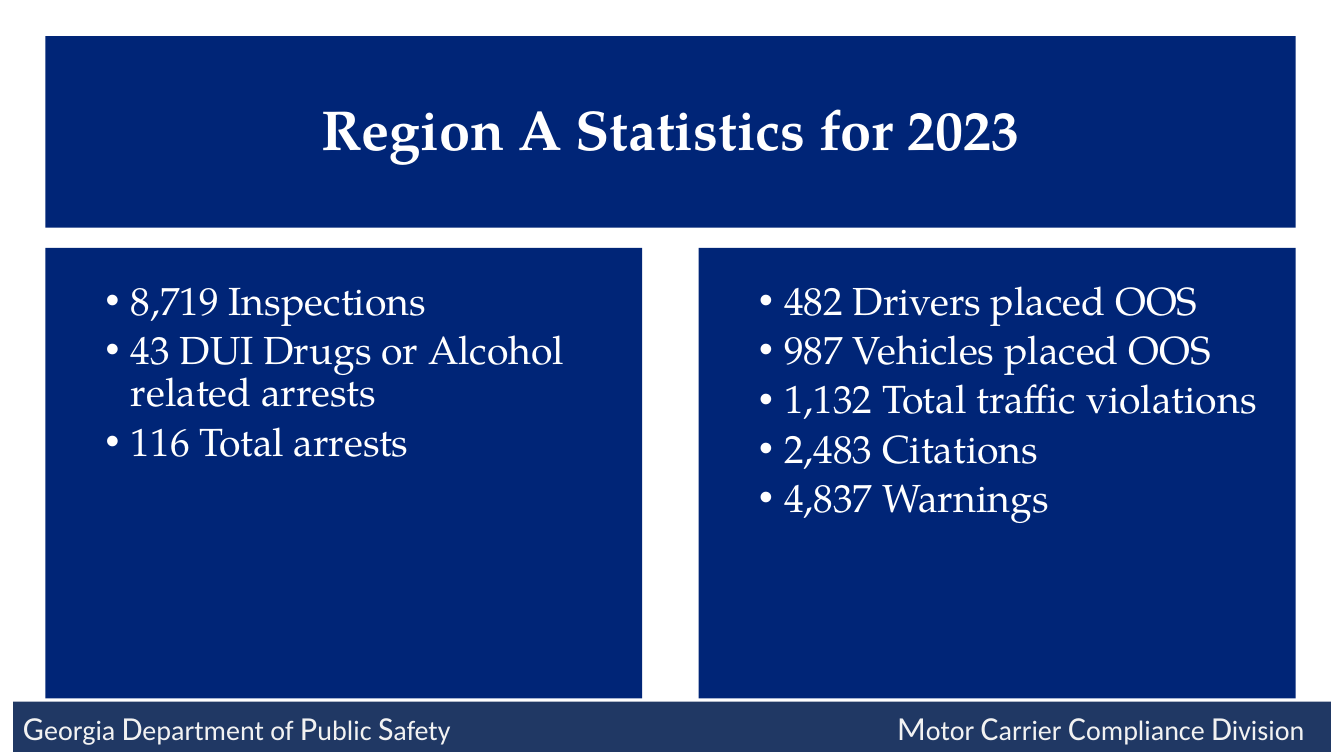
from dataclasses import dataclass
from itertools import groupby

from lxml import etree
from pptx import Presentation
from pptx import util as u
from pptx.dml.color import RGBColor
from pptx.enum import shapes, text
from pptx.oxml import ns


@dataclass(frozen=True)
class Theme:
    panel: str = "002577"
    bar: str = "203864"
    light: str = "FFFFFF"
    bar_text: str = "F2F2F2"
    serif: str = "TeX Gyre Pagella"
    sans: str = "Calibri"
    title: int = 40
    body: int = 28
    cap: int = 24
    small: int = 20


def add_text(p, content, *, size, font, color, bold=False):
    r = p.add_run()
    r.text = content
    r.font.size = u.Pt(size)
    r.font.name = font
    r.font.bold = bold
    r.font.color.rgb = RGBColor.from_string(color)


class Deck:
    def __init__(self, theme):
        self.theme = theme
        self.prs = Presentation()
        self.prs.slide_width = u.Inches(13.33)
        self.prs.slide_height = u.Inches(7.5)
        self.s = self.prs.slides.add_slide(self.prs.slide_layouts[6])

    def panel(self, x, y, w, h, fill, anchor):
        box = [u.Inches(v) for v in (x, y, w, h)]
        sp = self.s.shapes.add_shape(shapes.MSO_SHAPE.RECTANGLE, *box)
        sp.shadow.inherit = False
        sp.fill.solid()
        sp.fill.fore_color.rgb = RGBColor.from_string(fill)
        sp.line.fill.background()
        tf = sp.text_frame
        tf.word_wrap = True
        tf.vertical_anchor = anchor
        tf.paragraphs[0].alignment = text.PP_ALIGN.LEFT
        return tf

    def title(self, content, x, y, w, h):
        t = self.theme
        p = self.panel(x, y, w, h, t.panel, text.MSO_ANCHOR.MIDDLE).paragraphs[0]
        p.alignment = text.PP_ALIGN.CENTER
        p.line_spacing = 0.9
        add_text(p, content, size=t.title, font=t.serif, color=t.light, bold=True)

    def bullets(self, items, x, y, w, h):
        t = self.theme
        tf = self.panel(x, y, w, h, t.panel, text.MSO_ANCHOR.TOP)
        tf.margin_top = u.Inches(0.33)
        for i, item in enumerate(items):
            p = tf.add_paragraph() if i else tf.paragraphs[0]
            p.alignment = text.PP_ALIGN.LEFT
            p.line_spacing = 0.9
            p.space_before = u.Pt(5 if i else 0)
            pPr = p._p.get_or_add_pPr()
            pPr.set("marL", str(u.Inches(0.75)))
            pPr.set("indent", str(u.Inches(-0.25)))
            etree.SubElement(pPr, ns.qn("a:buFont"), typeface="Arial")
            etree.SubElement(pPr, ns.qn("a:buChar"), char="•")
            add_text(p, item, size=t.body, font=t.serif, color=t.light)

    def footer(self, left, right, x, y, w, h, tab):
        t = self.theme
        p = self.panel(x, y, w, h, t.bar, text.MSO_ANCHOR.MIDDLE).paragraphs[0]
        tabs = etree.SubElement(p._p.get_or_add_pPr(), ns.qn("a:tabLst"))
        etree.SubElement(tabs, ns.qn("a:tab"), pos=str(u.Inches(tab)), algn="r")
        for is_cap, chars in groupby(f"{left}\t{right}", str.isupper):
            add_text(p, "".join(chars), size=t.cap if is_cap else t.small,
                     font=t.sans, color=t.bar_text)


def main():
    deck = Deck(Theme())
    left, width, column = 0.45, 12.4, 5.92
    deck.title("Region A Statistics for 2023", left, 0.36, width, 1.9)
    columns = [
        ["8,719 Inspections", "43 DUI Drugs or Alcohol related arrests",
         "116 Total arrests"],
        ["482 Drivers placed OOS", "987 Vehicles placed OOS",
         "1,132 Total traffic violations", "2,483 Citations", "4,837 Warnings"],
    ]
    for i, items in enumerate(columns):
        deck.bullets(items, left + i * (width - column), 2.46, column, 4.47)
    deck.footer("Georgia Department of Public Safety",
                "Motor Carrier Compliance Division",
                0.13, 6.96, 13.07, 0.5, tab=12.71)
    deck.prs.save("out.pptx")


if __name__ == "__main__":
    main()
